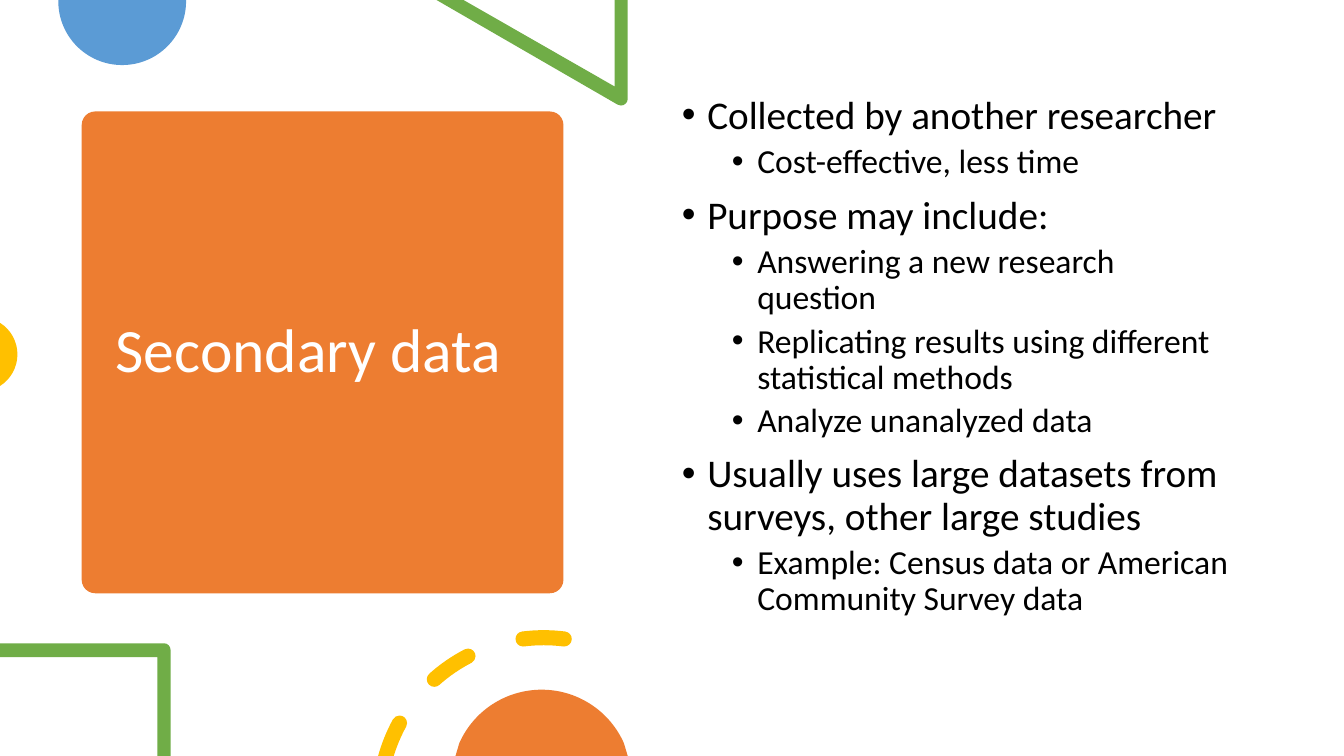
import dataclasses
import math

import lxml.etree
import pptx
import pptx.dml.color
import pptx.enum.shapes
import pptx.enum.text
import pptx.oxml.ns
import pptx.shapes.autoshape
import pptx.slide
import pptx.text.text
import pptx.util

Cm = pptx.util.Cm
qn = pptx.oxml.ns.qn
Point = tuple[float, float]
Step = tuple[Point, ...]

PAGE_WIDTH, PAGE_HEIGHT = 33.87, 19.05
FONT = "Calibri"
COLORS = {
    "orange": "ED7D31",
    "blue": "5B9BD5",
    "green": "70AD47",
    "yellow": "FFC000",
    "white": "FFFFFF",
    "black": "000000",
}


@dataclasses.dataclass
class Outline:
    color: str
    contours: list[list[Step]]


@dataclasses.dataclass
class Level:
    size: int
    space_before: int
    indent: float


@dataclasses.dataclass
class Item:
    level: int
    text: str


LEVELS = [Level(28, 10, 0.64), Level(24, 5, 1.9)]
ITEMS = [
    Item(0, "Collected by another researcher"),
    Item(1, "Cost-effective, less time"),
    Item(0, "Purpose may include:"),
    Item(1, "Answering a new research question"),
    Item(1, "Replicating results using different statistical methods"),
    Item(1, "Analyze unanalyzed data"),
    Item(0, "Usually uses large datasets from surveys, other large studies"),
    Item(1, "Example: Census data or American Community Survey data"),
]


def lines(*points: Point) -> list[Step]:
    return [(point,) for point in points]


def on_circle(x: float, y: float, radius: float, degrees: float) -> Point:
    angle = math.radians(degrees)
    return x + radius * math.cos(angle), y + radius * math.sin(angle)


def arc(x: float, y: float, radius: float, start: float, end: float) -> list[Step]:
    low, high = sorted((start, end))
    quarters = [angle for angle in range(-360, 721, 90) if low < angle < high]
    stops = sorted([start, *quarters, end], reverse=start > end)
    steps = lines(on_circle(x, y, radius, start))
    for first, last in zip(stops, stops[1:]):
        reach = 4 / 3 * math.tan(math.radians(last - first) / 4)
        (ax, ay), (bx, by) = (on_circle(x, y, radius, angle) for angle in (first, last))
        steps.append((
            (ax - reach * (ay - y), ay + reach * (ax - x)),
            (bx + reach * (by - y), by - reach * (bx - x)),
            (bx, by),
        ))
    return steps


def ring_dash(outer_start: float, inner_start: float, end: float, rounded: bool = True) -> list[Step]:
    x, y, radius, half_width = 13.7, 20.21, 4.14, 0.19
    steps = arc(x, y, radius + half_width, outer_start, end)
    steps += arc(*on_circle(x, y, radius, end), half_width, end, end + 180)[1:]
    steps += arc(x, y, radius - half_width, end, inner_start)[1:]
    if rounded:
        center = on_circle(x, y, radius, inner_start)
        steps += arc(*center, half_width, inner_start - 180, inner_start)[1:]
    return steps


OUTLINES = [
    Outline("blue", [lines((4.69, 0), (1.47, 0)) + arc(3.08, 0.03, 1.61, 180, 0)]),
    Outline("green", [lines((15.82, 0), (15.49, 0), (15.49, 2.18), (11.68, 0), (11, 0))
                      + arc(15.65, 2.49, 0.17, 120, 0)]),
    Outline("yellow", [arc(-0.5, 8.93, 0.94, -57.9, 57.9)]),
    Outline("green", [lines((0, 16.56), (0, 16.21)) + arc(4.13, 16.38, 0.17, -90, 0)
                      + lines((4.3, PAGE_HEIGHT), (3.97, PAGE_HEIGHT), (3.97, 16.56))]),
    Outline("yellow", [ring_dash(195.54, 197.08, 208.7, False),
                       ring_dash(228.3, 228.3, 242.6), ring_dash(262.8, 262.8, 277.2)]),
    Outline("orange", [lines((11.48, PAGE_HEIGHT)) + arc(13.65, 19.65, 2.27, 204, 336)
                       + lines((15.82, PAGE_HEIGHT))]),
]


def set_all(target: object, values: dict[str, object]) -> None:
    for name, value in values.items():
        setattr(target, name, value)


def rgb(color: str) -> pptx.dml.color.RGBColor:
    return pptx.dml.color.RGBColor.from_string(COLORS[color])


def paint(shape: pptx.shapes.autoshape.Shape, color: str) -> None:
    shape.shadow.inherit = False
    shape.fill.solid()
    shape.fill.fore_color.rgb = rgb(color)
    shape.line.fill.background()


def draw_outline(page: pptx.slide.Slide, outline: Outline) -> None:
    builder = None
    for contour in outline.contours:
        start, *points = [(Cm(x), Cm(y)) for step in contour for x, y in step]
        if builder is None:
            builder = page.shapes.build_freeform(*start)
        else:
            builder.move_to(*start)
        builder.add_line_segments(points, close=True)
    shape = builder.convert_to_shape()
    paint(shape, outline.color)
    segments = iter(list(shape.element.iter(qn("a:lnTo"))))
    for contour in outline.contours:
        for step in contour[1:]:
            parts = [next(segments) for point in step]
            if len(parts) == 3:
                bend(parts)


def bend(parts: list[lxml.etree.ElementBase]) -> None:
    curve = parts[0].makeelement(qn("a:cubicBezTo"))
    parts[0].addprevious(curve)
    for part in parts:
        curve.append(part[0])
        part.getparent().remove(part)


def write(para: pptx.text.text._Paragraph, text: str, size: int, color: str, space: int) -> None:
    set_all(para, {
        "alignment": pptx.enum.text.PP_ALIGN.LEFT,
        "line_spacing": 0.9,
        "space_before": pptx.util.Pt(space),
    })
    span = para.add_run()
    span.text = text
    set_all(span.font, {"name": FONT, "size": pptx.util.Pt(size)})
    span.font.color.rgb = rgb(color)


def add_bullet(para: pptx.text.text._Paragraph, indent: float) -> None:
    properties = para._p.get_or_add_pPr()
    set_values = {"marL": Cm(indent), "indent": Cm(-0.64)}
    for name, value in set_values.items():
        properties.set(name, str(value))
    lxml.etree.SubElement(properties, qn("a:buFont")).set("typeface", "Arial")
    lxml.etree.SubElement(properties, qn("a:buChar")).set("char", "•")


def place(box: pptx.shapes.autoshape.Shape, frame: tuple[float, float, float, float],
          anchor: pptx.enum.text.MSO_ANCHOR) -> None:
    set_all(box, dict(zip(("left", "top", "width", "height"), map(Cm, frame))))
    set_all(box.text_frame, {
        "word_wrap": True,
        "auto_size": pptx.enum.text.MSO_AUTO_SIZE.NONE,
        "vertical_anchor": anchor,
    })


def add_title(page: pptx.slide.Slide) -> None:
    title = page.shapes.title
    card = page.shapes.add_shape(
        pptx.enum.shapes.MSO_SHAPE.ROUNDED_RECTANGLE, Cm(2.06), Cm(2.81), Cm(12.14), Cm(12.14))
    card.adjustments[0] = 0.028
    paint(card, "orange")
    title.element.addprevious(card.element)
    place(title, (2.66, 3.1, 10.95, 11.58), pptx.enum.text.MSO_ANCHOR.MIDDLE)
    write(title.text_frame.paragraphs[0], "Secondary data", 44, "white", 0)


def add_list(page: pptx.slide.Slide) -> None:
    body = page.placeholders[1]
    place(body, (16.93, 2.28, 14.6, 13.59), pptx.enum.text.MSO_ANCHOR.TOP)
    frame = body.text_frame
    for number, item in enumerate(ITEMS):
        para = frame.add_paragraph() if number else frame.paragraphs[0]
        level = LEVELS[item.level]
        para.level = item.level
        write(para, item.text, level.size, "black", level.space_before)
        add_bullet(para, level.indent)


def main() -> None:
    deck = pptx.Presentation()
    set_all(deck, {"slide_width": Cm(PAGE_WIDTH), "slide_height": Cm(PAGE_HEIGHT)})
    page = deck.slides.add_slide(deck.slide_layouts[1])
    add_title(page)
    add_list(page)
    for outline in OUTLINES:
        draw_outline(page, outline)
    deck.save("out.pptx")


if __name__ == "__main__":
    main()
